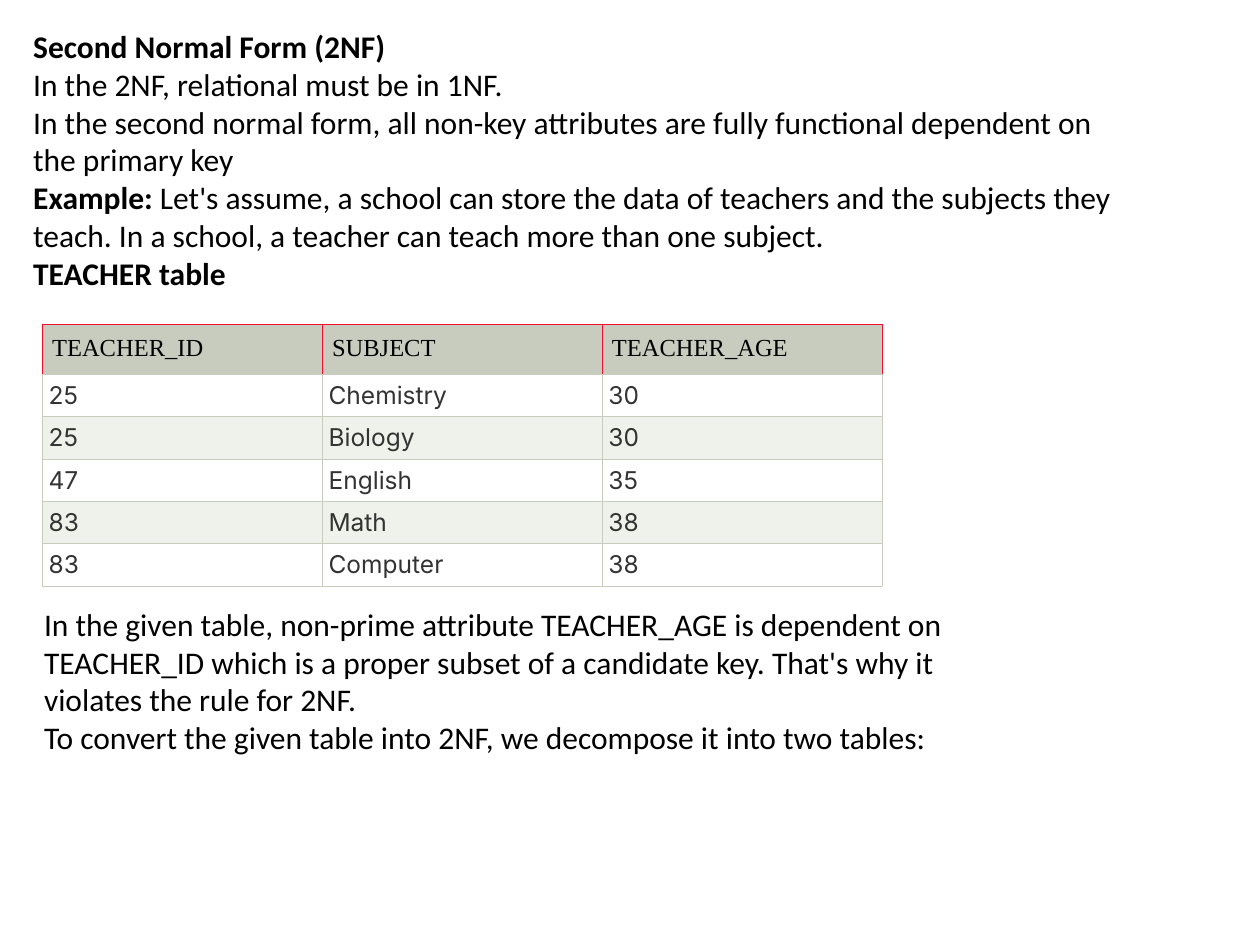
"""Build the Second Normal Form slide with its TEACHER table."""
import pptx
import pptx.dml.color
import pptx.enum.text
import pptx.oxml
import pptx.oxml.ns
import pptx.util

Cm = pptx.util.Cm
RGBColor = pptx.dml.color.RGBColor
PP_ALIGN = pptx.enum.text.PP_ALIGN

BLACK = RGBColor(0x00, 0x00, 0x00)
CHARCOAL = RGBColor(0x33, 0x33, 0x33)
WHITE = RGBColor(0xFF, 0xFF, 0xFF)
SAGE = RGBColor(0xC7, 0xCC, 0xBE)
PALE_SAGE = RGBColor(0xEF, 0xF1, 0xEB)
RED = RGBColor(0xF0, 0x0E, 0x30)

DEFINITION = [
    [("Second Normal Form (2NF)", True)],
    [("In the 2NF, relational must be in 1NF.", False)],
    [("In the second normal form, all non-key attributes are fully functional "
      "dependent on the primary key", False)],
    [("Example:", True),
     (" Let's assume, a school can store the data of teachers and the subjects "
      "they teach. In a school, a teacher can teach more than one subject.", False)],
    [("TEACHER table", True)],
]
CONCLUSION = [
    [("In the given table, non-prime attribute TEACHER_AGE is dependent on "
      "TEACHER_ID which is a proper subset of a candidate key. That's why it "
      "violates the rule for 2NF.", False)],
    [("To convert the given table into 2NF, we decompose it into two tables:", False)],
]
TEACHERS = [
    ("TEACHER_ID", "SUBJECT", "TEACHER_AGE"),
    ("25", "Chemistry", "30"),
    ("25", "Biology", "30"),
    ("47", "English", "35"),
    ("83", "Math", "38"),
    ("83", "Computer", "38"),
]


def add_text(paragraph, text, *, font="Calibri", size=18, color=BLACK, bold=False):
    """Add a formatted run to a paragraph."""
    run = paragraph.add_run()
    run.text = text
    run.font.name = font
    run.font.size = pptx.util.Pt(size)
    run.font.color.rgb = color
    run.font.bold = bold


def add_passage(slide, passage, left, top, width, height):
    """Add a wrapping text box with one paragraph per list of runs."""
    frame = slide.shapes.add_textbox(left, top, width, height).text_frame
    frame.word_wrap = True
    frame.auto_size = pptx.enum.text.MSO_AUTO_SIZE.SHAPE_TO_FIT_TEXT
    for index, runs in enumerate(passage):
        paragraph = frame.add_paragraph() if index else frame.paragraphs[0]
        for text, bold in runs:
            add_text(paragraph, text, bold=bold)


def set_borders(cell, **colors):
    """Draw the cell edges L, R, T and B in the given colours."""
    properties = cell._tc.get_or_add_tcPr()
    for position, edge in enumerate("LRTB"):
        properties.insert(position, pptx.oxml.parse_xml(
            f'<a:ln{edge} {pptx.oxml.ns.nsdecls("a")} w="7620"><a:solidFill>'
            f'<a:srgbClr val="{colors[edge]}"/></a:solidFill></a:ln{edge}>'))


def format_cell(cell, text, row):
    """Fill, border and write one cell according to its row."""
    header = row == 0
    margin = Cm(0.2 if header else 0.13)
    cell.margin_left = cell.margin_right = margin
    cell.margin_top = cell.margin_bottom = margin
    cell.fill.solid()
    cell.fill.fore_color.rgb = SAGE if header else (PALE_SAGE, WHITE)[row % 2]
    edge = RED if header else SAGE
    set_borders(cell, L=edge, R=edge, T=edge if header else SAGE, B=SAGE)
    paragraph = cell.text_frame.paragraphs[0]
    paragraph.alignment = PP_ALIGN.LEFT if header else PP_ALIGN.JUSTIFY
    add_text(paragraph, text, size=14,
             font="Times New Roman" if header else "Inter",
             color=BLACK if header else CHARCOAL)


def add_teacher_table(slide, left, top, width, header_height, row_height):
    """Add the TEACHER table with a header and banded rows."""
    height = header_height + row_height * (len(TEACHERS) - 1)
    table = slide.shapes.add_table(
        len(TEACHERS), len(TEACHERS[0]), left, top, width, height).table
    for row, teacher in enumerate(TEACHERS):
        table.rows[row].height = row_height if row else header_height
        for column, text in enumerate(teacher):
            format_cell(table.cell(row, column), text, row)


def main():
    """Build and save the slide."""
    presentation = pptx.Presentation()
    presentation.slide_width = Cm(25.4)
    presentation.slide_height = Cm(19.05)
    slide = presentation.slides.add_slide(presentation.slide_layouts[6])
    add_passage(slide, DEFINITION, Cm(0.42), Cm(0.42), Cm(22.44), Cm(5.64))
    add_teacher_table(slide, Cm(0.85), Cm(6.55), Cm(16.93), Cm(0.97), Cm(0.85))
    add_passage(slide, CONCLUSION, Cm(0.64), Cm(12.07), Cm(20.32), Cm(3.33))
    presentation.save("out.pptx")


if __name__ == "__main__":
    main()
